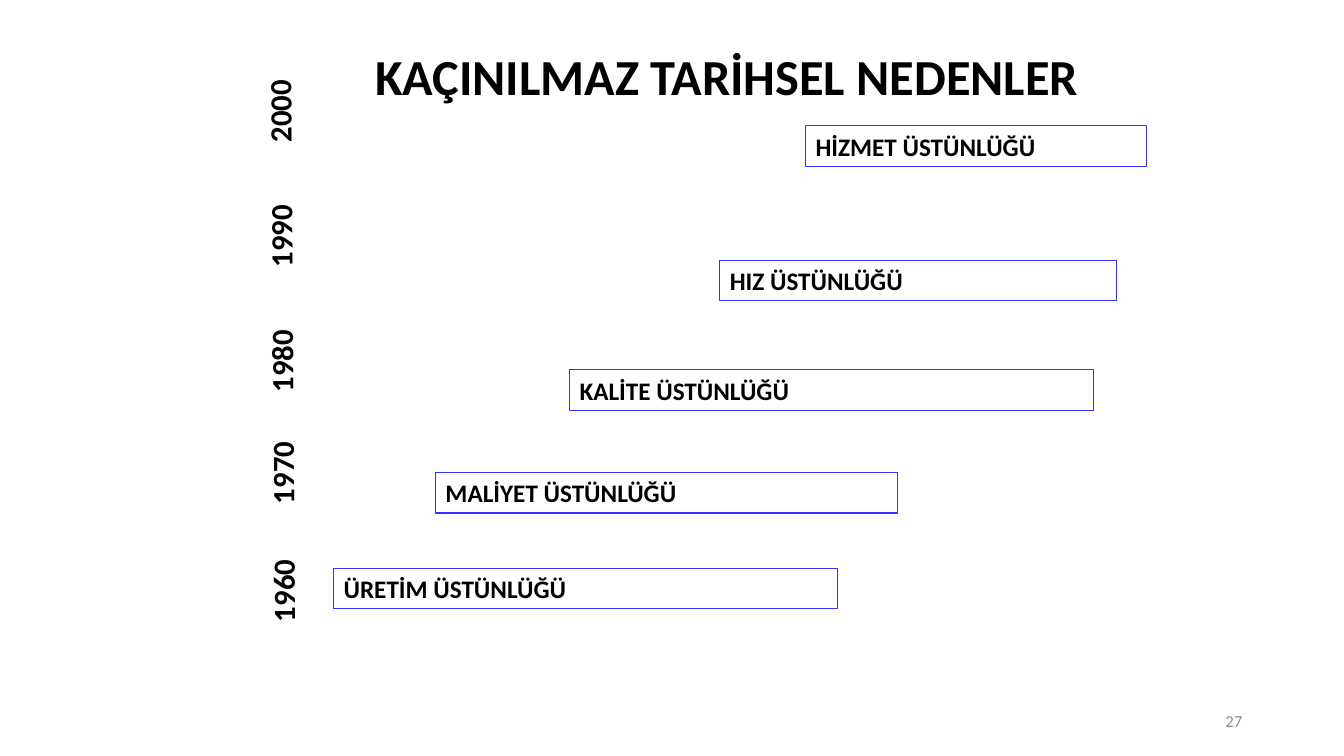
from pptx import Presentation
from pptx.dml.color import RGBColor
from pptx.enum.shapes import MSO_SHAPE as Shape
from pptx.enum.text import MSO_ANCHOR as Anchor, MSO_AUTO_SIZE as Fit, PP_ALIGN as Align
from pptx.oxml.ns import qn
from pptx.util import Inches, Pt
from lxml.etree import SubElement as Sub

BLACK = RGBColor(0x00, 0x00, 0x00)
GREY = RGBColor(0x8C, 0x8C, 0x8C)
BLUE = RGBColor(0x33, 0x33, 0xFF)


class Deck:
    font = "Calibri"

    def __init__(self, width, height):
        self.prs = Presentation()
        self.prs.slide_width = Inches(width)
        self.prs.slide_height = Inches(height)
        self.slide = self.prs.slides.add_slide(self.prs.slide_layouts[5])

    def fill_text(self, shape, text, size, color=BLACK, bold=True, align=Align.LEFT):
        frame = shape.text_frame
        frame.text = text
        frame.word_wrap = True
        frame.auto_size = Fit.NONE
        frame.vertical_anchor = Anchor.MIDDLE
        para = frame.paragraphs[0]
        para.alignment = align
        for run in para.runs:
            run.font.name = self.font
            run.font.size = Pt(size)
            run.font.bold = bold
            run.font.color.rgb = color
        return para

    def title(self, text, *box):
        shape = self.slide.shapes.title
        shape.left, shape.top, shape.width, shape.height = map(Inches, box)
        self.fill_text(shape, text, 36)

    def label(self, text, *box, **style):
        shape = self.slide.shapes.add_textbox(*map(Inches, box))
        self.fill_text(shape, text, **style)

    def axis(self, marks, stops, *box):
        shape = self.slide.shapes.add_textbox(*map(Inches, box))
        shape.rotation = 269.6
        para = self.fill_text(shape, "\t".join(marks), 22)
        tabs = Sub(para._p.get_or_add_pPr(), qn("a:tabLst"))
        for stop in stops:
            Sub(tabs, qn("a:tab"), pos=str(Inches(stop)), algn="l")

    def bar(self, text, left, top, width):
        shape = self.slide.shapes.add_shape(
            Shape.RECTANGLE, Inches(left), Inches(top), Inches(width), Inches(0.4))
        shape.shadow.inherit = False
        shape.fill.background()
        shape.line.color.rgb = BLUE
        shape.line.width = Pt(0.75)
        self.fill_text(shape, text, 18)


def main():
    deck = Deck(13.33, 7.5)
    deck.title("KAÇINILMAZ TARİHSEL NEDENLER", 3.62, 0.39, 7.42, 0.71)

    # Decades, read upwards
    years = [str(year) for year in range(1960, 2001, 10)]
    deck.axis(years, (1.17, 2.28, 3.52, 4.76), -0.13, 3.12, 5.83, 0.47)

    # Advantage of each decade
    for bar in (
        ("HİZMET ÜSTÜNLÜĞÜ", 7.99, 1.25, 3.38),
        ("HIZ ÜSTÜNLÜĞÜ", 7.14, 2.58, 3.93),
        ("KALİTE ÜSTÜNLÜĞÜ", 5.65, 3.67, 5.2),
        ("MALİYET ÜSTÜNLÜĞÜ", 4.32, 4.69, 4.58),
        ("ÜRETİM ÜSTÜNLÜĞÜ", 3.31, 5.64, 5),
    ):
        deck.bar(*bar)

    # Page number
    deck.label("27", 9.42, 6.95, 3, 0.4,
               size=12, color=GREY, bold=False, align=Align.RIGHT)
    deck.prs.save("out.pptx")


if __name__ == "__main__":
    main()
